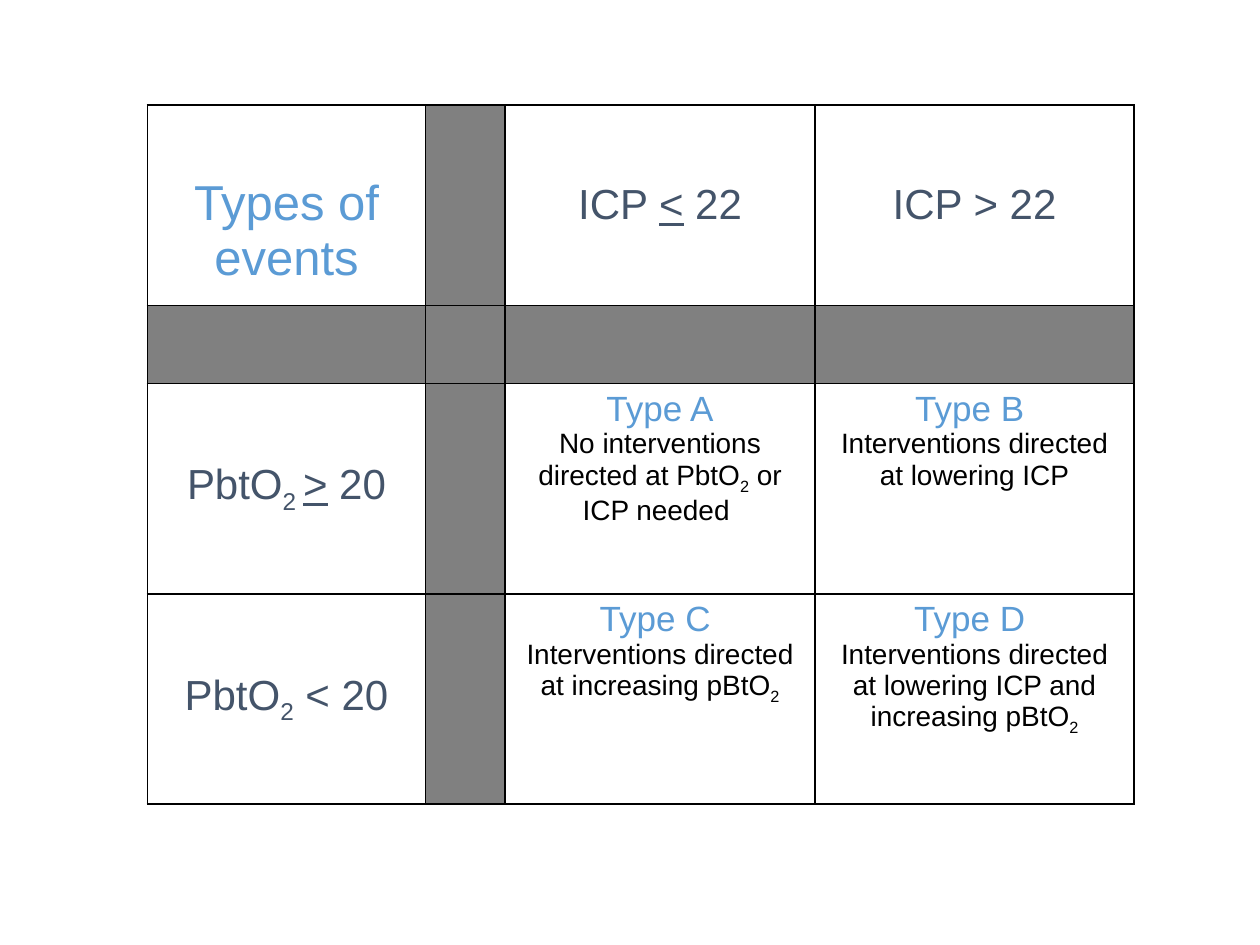
from lxml.etree import SubElement as Sub
from pptx import Presentation
from pptx.dml.color import RGBColor as Rgb
from pptx.enum.text import MSO_ANCHOR as Anchor, PP_ALIGN as Align
from pptx.oxml.ns import qn
from pptx.util import Cm, Pt

HUES = {"blue": "5B9BD5", "slate": "44546A", "black": "000000", "gray": "808080"}
COLS = [5.61, 1.6, 6.25, 6.43]
ROWS = [4.04, 1.57, 4.24, 4.24]
TWO = ("2", "sub")
HEADS = {
    (0, 2): ["ICP ", ("<", "line"), " 22"],
    (0, 3): ["ICP > 22"],
    (2, 0): ["PbtO", ("2 ", "sub"), (">", "line"), " 20"],
    (3, 0): ["PbtO", TWO, " < 20"],
}
TYPES = {
    (2, 2): ("Type A", ["No interventions directed at PbtO", TWO, " or ICP needed "]),
    (2, 3): ("Type B ", ["Interventions directed at lowering ICP"]),
    (3, 2): ("Type C ", ["Interventions directed at increasing pBtO", TWO]),
    (3, 3): ("Type D ", ["Interventions directed at lowering ICP and increasing pBtO", TWO]),
}


def add_runs(para, parts, size, hue):
    para.alignment = Align.CENTER
    for part in parts:
        text, mark = (part, "") if isinstance(part, str) else part
        run = para.add_run()
        run.text = text
        font = run.font
        font.name = "Arial"
        font.size = Pt(size)
        font.color.rgb = Rgb.from_string(HUES[hue])
        if mark == "line":
            font.underline = True
        elif mark == "sub":
            run.font._element.set("baseline", "-25000")


def set_edge(cell):
    props = cell._tc.get_or_add_tcPr()
    for side in ("lnL", "lnR", "lnT", "lnB"):
        line = Sub(props, qn(f"a:{side}"), w=str(Pt(1)))
        fill = Sub(line, qn("a:solidFill"))
        Sub(fill, qn("a:srgbClr"), val=HUES["black"])


def set_fill(cell, gray):
    if gray:
        cell.fill.solid()
        cell.fill.fore_color.rgb = Rgb.from_string(HUES["gray"])
    else:
        cell.fill.background()


def add_grid(slide):
    frame = slide.shapes.add_table(
        len(ROWS), len(COLS), Cm(2.97), Cm(2.12), Cm(sum(COLS)), Cm(sum(ROWS)))
    grid = frame.table
    grid.first_row = grid.horz_banding = False
    for col, width in zip(grid.columns, COLS):
        col.width = Cm(width)
    for row, height in zip(grid.rows, ROWS):
        row.height = Cm(height)
    for r in range(len(ROWS)):
        for c in range(len(COLS)):
            set_edge(grid.cell(r, c))
            set_fill(grid.cell(r, c), r == 1 or c == 1)
    return grid


def add_title(cell):
    cell.margin_top = Cm(1.44)
    add_runs(cell.text_frame.paragraphs[0], ["Types of events"], 28, "blue")


def add_head(cell, parts):
    cell.vertical_anchor = Anchor.MIDDLE
    add_runs(cell.text_frame.paragraphs[0], parts, 24, "slate")


def add_type(cell, name, parts):
    frame = cell.text_frame
    add_runs(frame.paragraphs[0], [name], 20, "blue")
    add_runs(frame.add_paragraph(), parts, 16, "black")


def main():
    deck = Presentation()
    deck.slide_width, deck.slide_height = Cm(25.4), Cm(19.05)
    slide = deck.slides.add_slide(deck.slide_layouts[6])
    grid = add_grid(slide)
    add_title(grid.cell(0, 0))
    for place, parts in HEADS.items():
        add_head(grid.cell(*place), parts)
    for place, (name, parts) in TYPES.items():
        add_type(grid.cell(*place), name, parts)
    deck.save("out.pptx")


if __name__ == "__main__":
    main()
